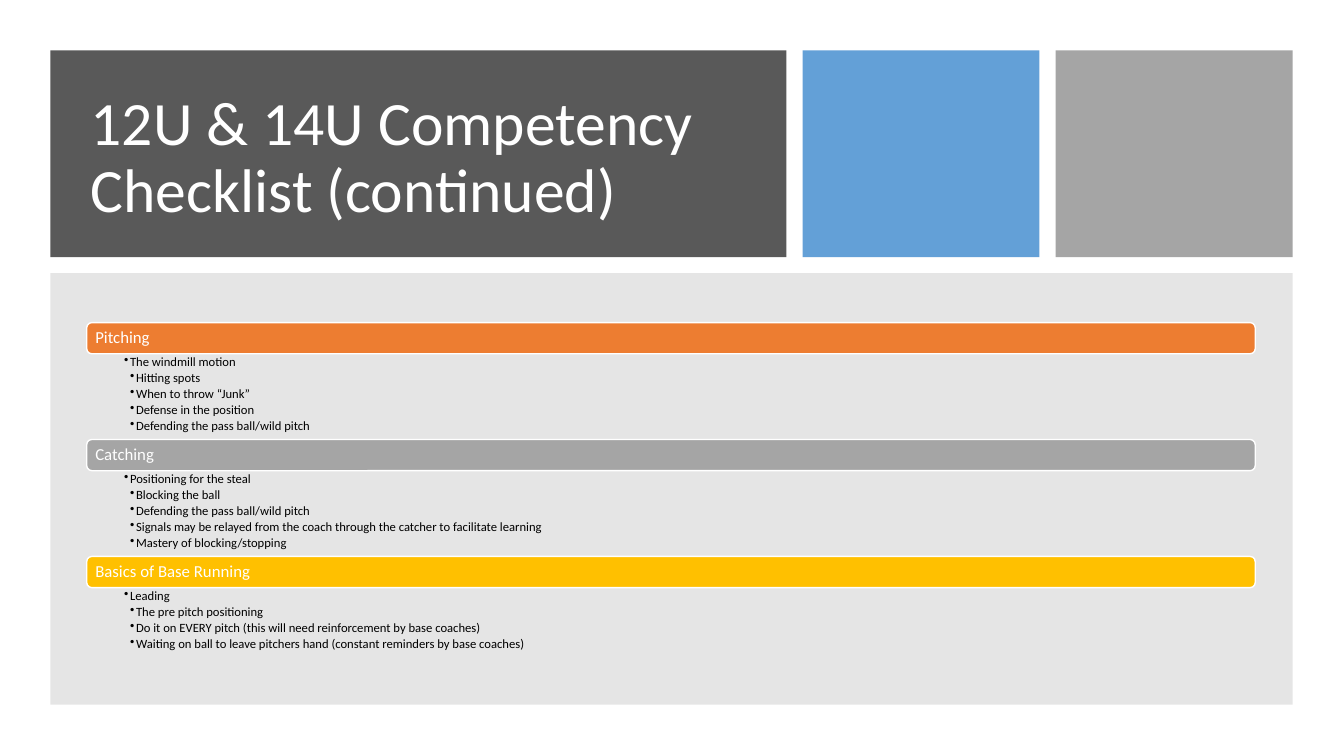
from lxml import etree
from pptx import Presentation, util as u
from pptx.dml.color import RGBColor
from pptx.enum import shapes, text
from pptx.oxml import ns

WHITE = RGBColor(0xFF, 0xFF, 0xFF)
BLACK = RGBColor(0, 0, 0)
CHARCOAL = RGBColor(0x59, 0x59, 0x59)
BLUE = RGBColor(0x5B, 0x9B, 0xD5)
SILVER = RGBColor(0xA5, 0xA5, 0xA5)
GRAY = RGBColor(0x80, 0x80, 0x80)
ORANGE = RGBColor(0xED, 0x7D, 0x31)
GOLD = RGBColor(0xFF, 0xC0, 0x00)

FONT = "Calibri"
GAP = 0.16
TILE_WIDTH = 2.35
HEADING_HEIGHT = 0.31
SECTION_PITCH = 1.16
BULLET_STEP = 0.06

TITLE = "12U & 14U Competency Checklist (continued)"
SECTIONS = [
    ("Pitching", ORANGE, [
        "The windmill motion",
        "Hitting spots",
        "When to throw “Junk”",
        "Defense in the position",
        "Defending the pass ball/wild pitch",
    ]),
    ("Catching", SILVER, [
        "Positioning for the steal",
        "Blocking the ball",
        "Defending the pass ball/wild pitch",
        "Signals may be relayed from the coach through the catcher to facilitate learning",
        "Mastery of blocking/stopping",
    ]),
    ("Basics of Base Running", GOLD, [
        "Leading",
        "The pre pitch positioning",
        "Do it on EVERY pitch (this will need reinforcement by base coaches)",
        "Waiting on ball to leave pitchers hand (constant reminders by base coaches)",
    ]),
]


def inches(box):
    return [u.Inches(length) for length in box]


def add_block(page, box, color, opacity=100, kind=shapes.MSO_SHAPE.RECTANGLE):
    block = page.shapes.add_shape(kind, *inches(box))
    block.shadow.inherit = False
    block.fill.solid()
    block.fill.fore_color.rgb = color
    block.line.fill.background()
    if opacity < 100:
        tint = block.element.spPr.find(".//" + ns.qn("a:srgbClr"))
        etree.SubElement(tint, ns.qn("a:alpha"), val=str(opacity * 1000))
    return block


def set_frame(frame, insets, anchor):
    frame.word_wrap = True
    frame.auto_size = text.MSO_AUTO_SIZE.NONE
    frame.vertical_anchor = anchor
    (frame.margin_left, frame.margin_top,
     frame.margin_right, frame.margin_bottom) = inches(insets)


def style_para(para, size, color, space_after=0):
    para.font.name = FONT
    para.font.size = u.Pt(size)
    para.font.color.rgb = color
    para.alignment = text.PP_ALIGN.LEFT
    para.line_spacing = 0.9
    para.space_before = u.Pt(0)
    para.space_after = u.Pt(space_after)


def add_header(page, box):
    left, top, width, height = box
    title_width = width - 2 * (TILE_WIDTH + GAP)
    band = add_block(page, (left, top, title_width, height), CHARCOAL)
    for column, (color, opacity) in enumerate([(BLUE, 95), (SILVER, 100)]):
        tile_left = left + title_width + GAP + column * (TILE_WIDTH + GAP)
        add_block(page, (tile_left, top, TILE_WIDTH, height), color, opacity)

    title = page.shapes.title
    title.element.addprevious(band.element)
    title.left, title.top, title.width, title.height = inches(
        (left + 0.3, top + 0.3, title_width - 0.64, height - 0.49))
    title.text_frame.text = TITLE
    set_frame(title.text_frame, (0.1, 0.05, 0.1, 0.05), text.MSO_ANCHOR.MIDDLE)
    style_para(title.text_frame.paragraphs[0], 44, WHITE)


def add_bullet(para, level):
    para.level = level
    properties = para._p.get_or_add_pPr()
    properties.set("marL", str(u.Inches(BULLET_STEP * level)))
    properties.set("indent", str(u.Inches(-BULLET_STEP)))
    etree.SubElement(properties, ns.qn("a:buChar"), char="•")


def add_section(page, box, heading, color, items):
    left, top, width, height = box
    bar = add_block(page, (left, top, width, HEADING_HEIGHT), color,
                    kind=shapes.MSO_SHAPE.ROUNDED_RECTANGLE)
    bar.line.color.rgb = WHITE
    bar.line.width = u.Pt(1)
    bar.text_frame.text = heading
    set_frame(bar.text_frame, (0.07, 0.05, 0.07, 0.05), text.MSO_ANCHOR.MIDDLE)
    style_para(bar.text_frame.paragraphs[0], 12, WHITE)

    details = page.shapes.add_textbox(*inches(
        (left, top + HEADING_HEIGHT, width, height - HEADING_HEIGHT)))
    frame = details.text_frame
    frame.text = "\n".join(items)
    set_frame(frame, (0.37, 0.02, 0.09, 0.02), text.MSO_ANCHOR.TOP)
    for index, para in enumerate(frame.paragraphs):
        style_para(para, 9, BLACK, 1.7)
        add_bullet(para, 1 if index == 0 else 2)


def add_checklist(page, box):
    left, top, width, height = box
    add_block(page, box, GRAY, 20)
    for row, section in enumerate(SECTIONS):
        section_top = top + 0.49 + row * SECTION_PITCH
        add_section(page, (left + 0.36, section_top, width - 0.73, SECTION_PITCH), *section)


def main():
    deck = Presentation()
    deck.slide_width, deck.slide_height = inches((13.33, 7.5))
    page = deck.slides.add_slide(deck.slide_layouts.get_by_name("Title Only"))
    add_header(page, (0.5, 0.5, 12.32, 2.05))
    add_checklist(page, (0.5, 2.71, 12.32, 4.28))
    deck.save("out.pptx")


if __name__ == "__main__":
    main()
